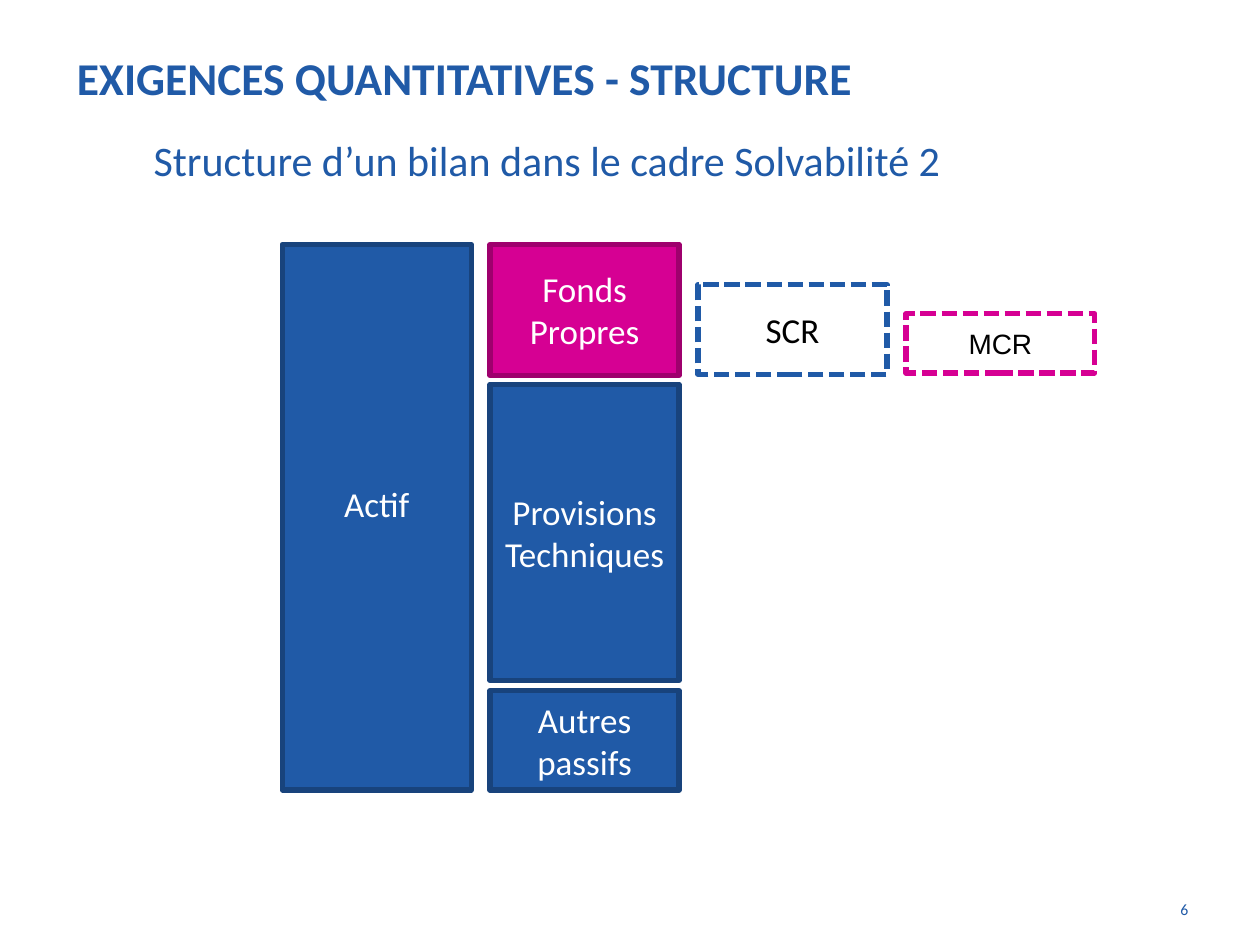
from dataclasses import dataclass

from pptx import Presentation
from pptx.dml.color import RGBColor
from pptx.enum.dml import MSO_LINE
from pptx.enum.shapes import MSO_SHAPE
from pptx.enum.text import MSO_ANCHOR, PP_ALIGN
from pptx.util import Inches, Pt


@dataclass(frozen=True)
class Theme:
    font: str = "Calibri"
    alternate_font: str = "Arial"
    blue: str = "205AA7"
    dark_blue: str = "18437C"
    pink: str = "D60093"
    dark_pink: str = "9E006D"
    white: str = "FFFFFF"
    black: str = "000000"
    title_size: int = 26
    subtitle_size: int = 24
    block_size: int = 20
    small_block_size: int = 16
    number_size: int = 9
    line_width: int = 3


THEME = Theme()

# Content
TITLE = "EXIGENCES QUANTITATIVES - STRUCTURE"
SUBTITLE = "Structure d’un bilan dans le cadre Solvabilité 2"
PAGE_NUMBER = "6"

# Block styles: fill, line, text colour, dashed
ASSET = (THEME.blue, THEME.dark_blue, THEME.white, False)
EQUITY = (THEME.pink, THEME.dark_pink, THEME.white, False)
SOLVENCY = (THEME.white, THEME.blue, THEME.black, True)
MINIMUM = (THEME.white, THEME.pink, THEME.black, True)

# Blocks: paragraphs, column, top, bottom, style
BLOCKS = [
    (["Actif"], 0, 1.94, 6.27, ASSET),
    (["Fonds", "Propres"], 1, 1.94, 2.98, EQUITY),
    (["Provisions", "Techniques"], 1, 3.05, 5.4, ASSET),
    (["Autres passifs"], 1, 5.48, 6.27, ASSET),
    (["SCR"], 2, 2.26, 2.97, SOLVENCY),
    (["MCR"], 3, 2.49, 2.96, MINIMUM),
]
FIRST_LEFT, COLUMN_STEP, BLOCK_WIDTH = 2.24, 1.65, 1.5


def color(value):
    return RGBColor.from_string(value)


def write(frame, lines, size, text_color, align, font=THEME.font, bold=False):
    frame.word_wrap = True
    for index, line in enumerate(lines):
        paragraph = frame.paragraphs[0] if index == 0 else frame.add_paragraph()
        paragraph.text = line
        paragraph.alignment = align
        paragraph.font.name = font
        paragraph.font.size = Pt(size)
        paragraph.font.bold = bold
        paragraph.font.color.rgb = color(text_color)


def add_text(slide, box, text, size, align):
    frame = slide.shapes.add_textbox(*map(Inches, box)).text_frame
    write(frame, [text], size, THEME.blue, align)
    return frame


def add_block(slide, lines, column, top, bottom, style):
    fill, line, text_color, dashed = style
    left = FIRST_LEFT + column * COLUMN_STEP
    box = (left, top, BLOCK_WIDTH, bottom - top)
    shape = slide.shapes.add_shape(MSO_SHAPE.RECTANGLE, *map(Inches, box))
    shape.shadow.inherit = False
    shape.fill.solid()
    shape.fill.fore_color.rgb = color(fill)
    shape.line.color.rgb = color(line)
    shape.line.width = Pt(THEME.line_width)
    if dashed:
        shape.line.dash_style = MSO_LINE.SQUARE_DOT
    frame = shape.text_frame
    frame.vertical_anchor = MSO_ANCHOR.MIDDLE
    minimum = style is MINIMUM
    write(frame, lines,
          THEME.small_block_size if minimum else THEME.block_size,
          text_color, PP_ALIGN.CENTER,
          THEME.alternate_font if minimum else THEME.font)
    return frame


def main():
    presentation = Presentation()
    presentation.slide_width, presentation.slide_height = Inches(10), Inches(7.5)
    slide = presentation.slides.add_slide(presentation.slide_layouts[5])

    # Title
    title = slide.shapes.title
    title.left, title.top = Inches(0.51), Inches(0)
    title.width, title.height = Inches(9), Inches(1.23)
    title.text_frame.vertical_anchor = MSO_ANCHOR.MIDDLE
    write(title.text_frame, [TITLE], THEME.title_size, THEME.blue,
          PP_ALIGN.LEFT, bold=True)

    # Subtitle, indented under the title
    subtitle = add_text(slide, (0.53, 0.99, 9, 5.69), SUBTITLE,
                        THEME.subtitle_size, PP_ALIGN.LEFT)
    subtitle.margin_left = Inches(0.69)
    subtitle.margin_top = Inches(0.08)

    # Balance sheet; the asset label sits slightly above the middle
    frames = [add_block(slide, *block) for block in BLOCKS]
    frames[0].margin_bottom = Inches(0.27)

    # Page number
    add_text(slide, (8.94, 7.09, 0.59, 0.39), PAGE_NUMBER,
             THEME.number_size, PP_ALIGN.RIGHT)

    presentation.save("out.pptx")


if __name__ == "__main__":
    main()
